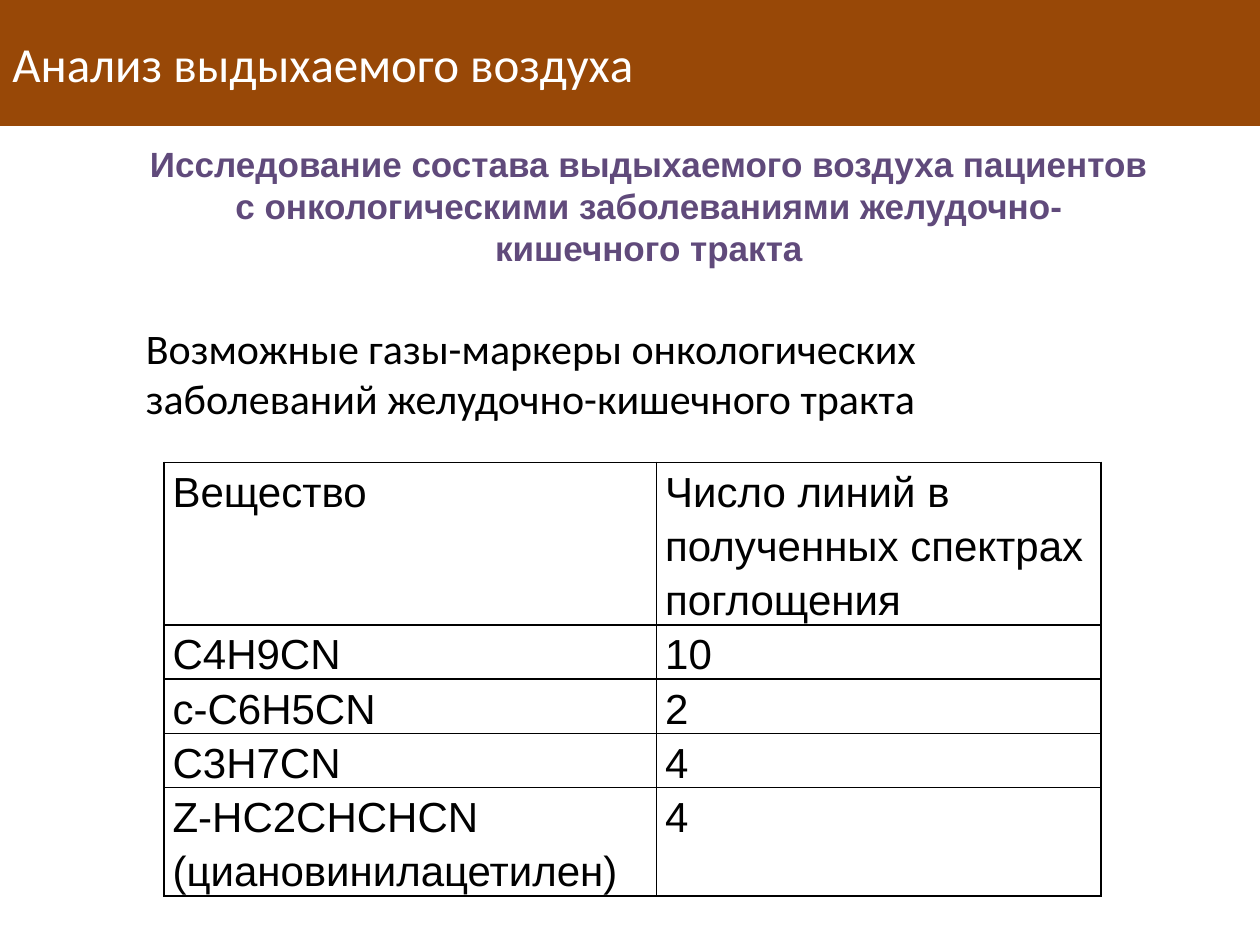
from dataclasses import dataclass

from lxml import etree
from pptx import Presentation
from pptx.dml.color import RGBColor
from pptx.enum import shapes, text
from pptx.oxml import ns
from pptx.util import Inches, Pt

COLORS = {"band": "984807", "white": "FFFFFF", "heading": "604A7B", "black": "000000"}


@dataclass(frozen=True)
class Style:
    font: str
    size: int
    color: str
    bold: bool = False
    align: text.PP_ALIGN = text.PP_ALIGN.LEFT
    spacing: float = 1.0


@dataclass(frozen=True)
class Box:
    left: float
    top: float
    width: float
    height: float

    def emu(self) -> tuple:
        return tuple(Inches(v) for v in (self.left, self.top, self.width, self.height))


TITLE = Style("Calibri", 28, "white")
HEADING = Style("Arial", 20, "heading", True, text.PP_ALIGN.CENTER)
BODY = Style("Calibri", 24, "black")
CELL = Style("Arial", 24, "black", spacing=1.15)

LINE_HEIGHT = 0.43
COLUMN_WIDTHS = (3.91, 3.53)
# Substance, number of lines, text lines in the row
ROWS = (
    ("Вещество", "Число линий в полученных спектрах поглощения", 3),
    ("C4H9CN", "10", 1),
    ("c-C6H5CN", "2", 1),
    ("C3H7CN", "4", 1),
    ("Z-HC2CHCHCN (циановинилацетилен)", "4", 2),
)


def rgb(name: str) -> RGBColor:
    return RGBColor.from_string(COLORS[name])


def write(tf, content: str, style: Style) -> None:
    tf.word_wrap = True
    p = tf.paragraphs[0]
    p.alignment = style.align
    p.line_spacing = style.spacing
    r = p.add_run()
    r.text = content
    r.font.name = style.font
    r.font.size = Pt(style.size)
    r.font.bold = style.bold
    r.font.color.rgb = rgb(style.color)


def add_text(s, box: Box, content: str, style: Style) -> None:
    tf = s.shapes.add_textbox(*box.emu()).text_frame
    write(tf, content, style)
    tf.auto_size = text.MSO_AUTO_SIZE.SHAPE_TO_FIT_TEXT


def add_title_band(s, box: Box, content: str) -> None:
    sp = s.shapes.add_shape(shapes.MSO_SHAPE.RECTANGLE, *box.emu())
    sp.shadow.inherit = False
    sp.fill.solid()
    sp.fill.fore_color.rgb = rgb("band")
    sp.line.fill.background()
    sp.text_frame.vertical_anchor = text.MSO_ANCHOR.MIDDLE
    write(sp.text_frame, content, TITLE)


def set_borders(cell) -> None:
    """Outline all four sides; border elements must precede the cell fill."""
    props = cell._tc.get_or_add_tcPr()
    for i, side in enumerate(("lnL", "lnR", "lnT", "lnB")):
        ln = etree.Element(ns.qn(f"a:{side}"), w=str(Pt(1)))
        fill = etree.SubElement(ln, ns.qn("a:solidFill"))
        etree.SubElement(fill, ns.qn("a:srgbClr"), val=COLORS["black"])
        props.insert(i, ln)


def add_substance_table(s, left: float, top: float) -> None:
    height = LINE_HEIGHT * sum(row[-1] for row in ROWS)
    box = Box(left, top, sum(COLUMN_WIDTHS), height)
    table = s.shapes.add_table(len(ROWS), len(COLUMN_WIDTHS), *box.emu()).table
    table.first_row = table.horz_banding = False
    for column, width in zip(table.columns, COLUMN_WIDTHS):
        column.width = Inches(width)
    for i, (*contents, lines) in enumerate(ROWS):
        table.rows[i].height = Inches(LINE_HEIGHT * lines)
        for j, content in enumerate(contents):
            cell = table.cell(i, j)
            cell.margin_left = cell.margin_right = Inches(0.07)
            cell.margin_top = cell.margin_bottom = 0
            cell.fill.background()
            set_borders(cell)
            write(cell.text_frame, content, CELL)


def main() -> None:
    prs = Presentation()
    prs.slide_width, prs.slide_height = Inches(10), Inches(7.5)
    s = prs.slides.add_slide(prs.slide_layouts[6])
    add_substance_table(s, 1.3, 3.67)
    add_text(s, Box(1.06, 2.51, 8.13, 0.91),
             "Возможные газы-маркеры онкологических заболеваний "
             "желудочно-кишечного тракта", BODY)
    add_text(s, Box(1.05, 1.08, 8.2, 1.11),
             "Исследование состава выдыхаемого воздуха пациентов с онкологическими "
             "заболеваниями желудочно-кишечного тракта", HEADING)
    add_title_band(s, Box(0, 0, 10, 1), "Анализ выдыхаемого воздуха")
    prs.save("out.pptx")


if __name__ == "__main__":
    main()
